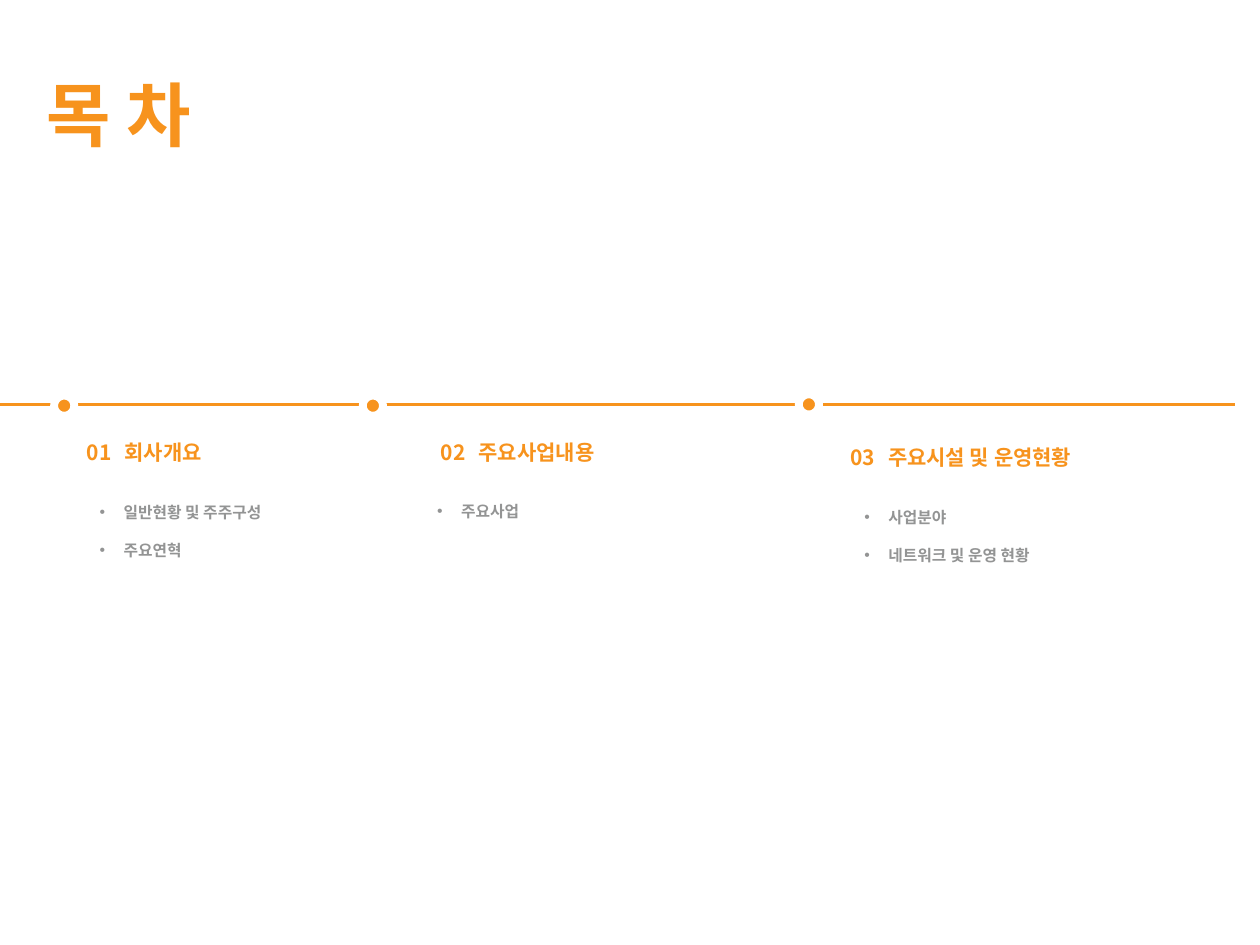
from lxml import etree
from pptx import Presentation
from pptx.dml.color import RGBColor
from pptx.enum.shapes import MSO_CONNECTOR, MSO_SHAPE
from pptx.enum.text import MSO_ANCHOR, MSO_AUTO_SIZE, PP_ALIGN
from pptx.oxml.ns import qn
from pptx.util import Inches, Pt

FONT = "Noto Sans CJK KR"
COLORS = {"accent": "F7931D", "item": "939494", "background": "FFFFFF"}
COMPARISON_LAYOUT = 4
LINE_Y = 3.21
LINE_END = 9.8
DOT_SIZE = 0.16
HEADING_TAB = 0.3
BULLET_INDENT = 0.19

# dot: left, top; heading and list: left, top, width, height
SECTIONS = [
    {"dot": (0.43, 3.14),
     "number": "01", "heading": "회사개요", "heading_box": (0.59, 3.44, 1.2, 0.3),
     "items": ["일반현황 및 주주구성", "주요연혁"], "list_box": (0.69, 3.79, 1.89, 0.71)},
    {"dot": (2.88, 3.14),
     "number": "02", "heading": "주요사업내용", "heading_box": (3.4, 3.44, 1.52, 0.3),
     "items": ["주요사업"], "list_box": (3.37, 3.78, 2.65, 0.36)},
    {"dot": (6.34, 3.13),
     "number": "03", "heading": "주요시설 및 운영현황", "heading_box": (6.65, 3.48, 2.16, 0.3),
     "items": ["사업분야", "네트워크 및 운영 현황"], "list_box": (6.76, 3.83, 2.65, 0.66)},
]


def color(name):
    return RGBColor.from_string(COLORS[name])


def place(shape, box):
    shape.left, shape.top, shape.width, shape.height = map(Inches, box)


def format_text(shape, size, color_name):
    """Apply the slide's frame settings and bold font to all text in a shape."""
    frame = shape.text_frame
    frame.word_wrap = True
    frame.auto_size = MSO_AUTO_SIZE.SHAPE_TO_FIT_TEXT
    frame.vertical_anchor = MSO_ANCHOR.TOP
    for paragraph in frame.paragraphs:
        paragraph.alignment = PP_ALIGN.LEFT
        paragraph.space_before = Pt(0)
        for run in paragraph.runs:
            run.font.name = FONT
            run.font.size = Pt(size)
            run.font.bold = True
            run.font.color.rgb = color(color_name)
            east_asian = etree.Element(qn("a:ea"), typeface=FONT)
            run.font._element.find(qn("a:latin")).addnext(east_asian)


def add_title(slide, text):
    title = slide.shapes.title
    place(title, (0.27, 0.52, 1.61, 0.77))
    title.text_frame.text = text
    format_text(title, 40, "accent")


def add_timeline(slide):
    y = Inches(LINE_Y)
    line = slide.shapes.add_connector(MSO_CONNECTOR.STRAIGHT, 0, y, Inches(LINE_END), y)
    line.line.color.rgb = color("accent")
    line.line.width = Pt(1.5)
    etree.SubElement(line._element.spPr, qn("a:effectLst"))


def add_dot(slide, left, top):
    size = Inches(DOT_SIZE)
    dot = slide.shapes.add_shape(MSO_SHAPE.OVAL, Inches(left), Inches(top), size, size)
    dot.shadow.inherit = False
    dot.fill.solid()
    dot.fill.fore_color.rgb = color("accent")
    dot.line.color.rgb = color("background")
    dot.line.width = Pt(4.5)


def add_heading(slide, number, text, box):
    heading = slide.shapes.add_textbox(*map(Inches, box))
    heading.text_frame.text = f"{number}\t{text}"
    properties = heading.text_frame.paragraphs[0]._p.get_or_add_pPr()
    tabs = etree.SubElement(properties, qn("a:tabLst"))
    etree.SubElement(tabs, qn("a:tab"), pos=str(Inches(HEADING_TAB)), algn="l")
    format_text(heading, 12, "accent")


def fill_list(placeholder, items, box):
    place(placeholder, box)
    placeholder.text_frame.text = "\n".join(items)
    for paragraph in placeholder.text_frame.paragraphs:
        properties = paragraph._p.get_or_add_pPr()
        properties.set("marL", str(Inches(BULLET_INDENT)))
        properties.set("indent", str(-Inches(BULLET_INDENT)))
        etree.SubElement(properties, qn("a:buFont"), typeface="Arial")
        etree.SubElement(properties, qn("a:buChar"), char="•")
        paragraph.line_spacing = 2.0
    format_text(placeholder, 9, "item")


def main():
    presentation = Presentation()
    presentation.slide_width, presentation.slide_height = Inches(10), Inches(7.5)
    slide = presentation.slides.add_slide(presentation.slide_layouts[COMPARISON_LAYOUT])
    bodies = list(slide.placeholders)[1:]

    add_title(slide, "목 차")
    add_timeline(slide)
    for section, body in zip(SECTIONS, bodies):
        add_dot(slide, *section["dot"])
        add_heading(slide, section["number"], section["heading"], section["heading_box"])
        fill_list(body, section["items"], section["list_box"])
    for unused in bodies[len(SECTIONS):]:
        unused._element.getparent().remove(unused._element)

    presentation.save("out.pptx")


if __name__ == "__main__":
    main()
